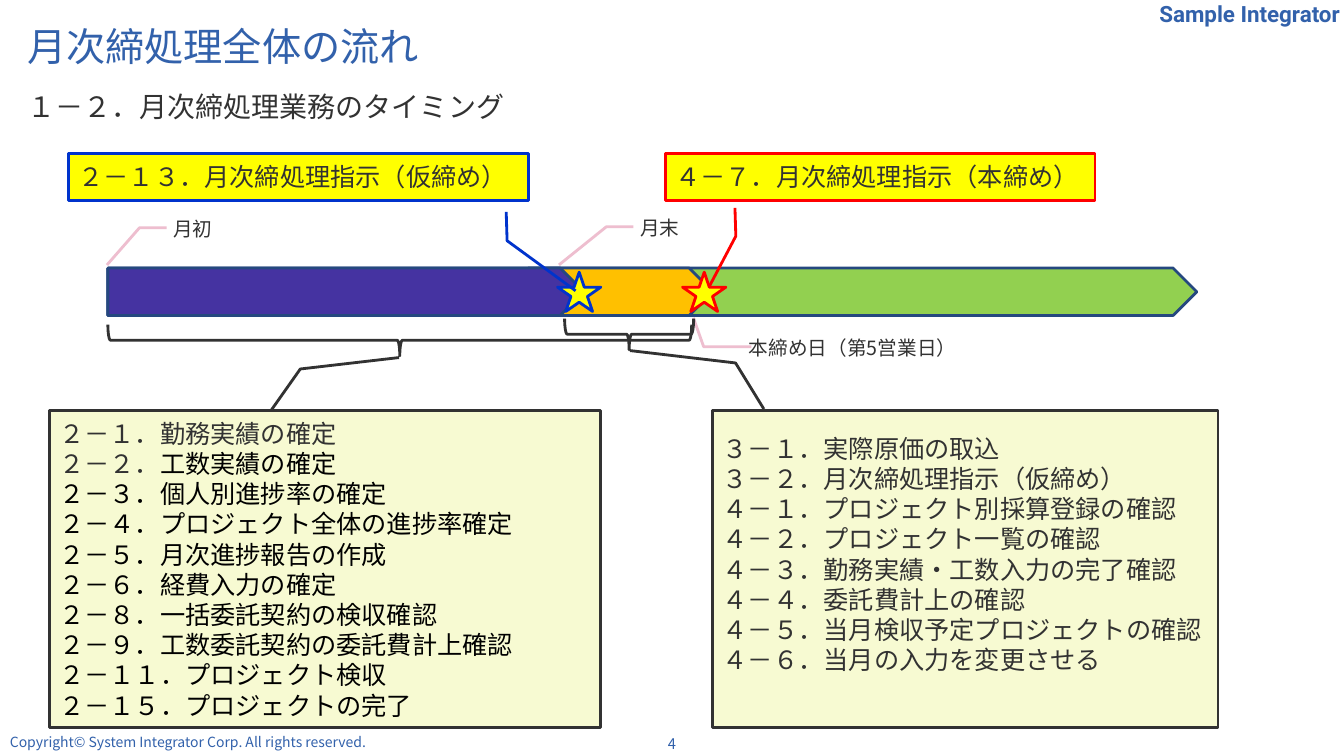
import pptx
import pptx.util
import pptx.dml.color
import pptx.enum.shapes
import pptx.enum.text
import pptx.oxml
import pptx.oxml.ns

Inches = pptx.util.Inches
Pt = pptx.util.Pt
SHAPE = pptx.enum.shapes.MSO_SHAPE
ANCHOR = pptx.enum.text.MSO_ANCHOR
ALIGN = pptx.enum.text.PP_ALIGN
NOTO = "Noto Sans CJK JP"

COLORS = {
    "brand": "3261AB", "text": "323232", "black": "000000",
    "purple": "4533A1", "orange": "FFC000", "green": "92D050",
    "bar_line": "25487F", "pink": "EEBECF", "cream": "F7FAD2",
    "yellow": "FFFF00", "red": "FF0000", "blue": "0033CC",
}

TASKS_BEFORE_CLOSE = [
    "２－１．勤務実績の確定",
    [("２－２．", "text"), ("工数実績の確定", "black")],
] + [[(task, "black")] for task in (
    "２－３．個人別進捗率の確定",
    "２－４．プロジェクト全体の進捗率確定",
    "２－５．月次進捗報告の作成",
    "２－６．経費入力の確定",
    "２－８．一括委託契約の検収確認",
    "２－９．工数委託契約の委託費計上確認",
    "２－１１．プロジェクト検収",
    "２－１５．プロジェクトの完了",
)]

TASKS_DURING_CLOSE = [
    "３－１．実際原価の取込",
    "３－２．月次締処理指示（仮締め）",
    "４－１．プロジェクト別採算登録の確認",
    "４－２．プロジェクト一覧の確認",
    "４－３．勤務実績・工数入力の完了確認",
    "４－４．委託費計上の確認",
    "４－５．当月検収予定プロジェクトの確認",
    "４－６．当月の入力を変更させる",
]


def rgb(name):
    return pptx.dml.color.RGBColor.from_string(COLORS[name])


def write(frame, paragraphs, size=18, color="text", font=NOTO, bold=False,
          align=ALIGN.LEFT, anchor=ANCHOR.MIDDLE, wrap=True,
          insets=(0.1, 0.05, 0.1, 0.05)):
    frame.auto_size = pptx.enum.text.MSO_AUTO_SIZE.NONE
    frame.word_wrap = wrap
    frame.vertical_anchor = anchor
    (frame.margin_left, frame.margin_top,
     frame.margin_right, frame.margin_bottom) = map(Inches, insets)
    for index, content in enumerate(paragraphs):
        paragraph = frame.add_paragraph() if index else frame.paragraphs[0]
        paragraph.alignment = align
        paragraph.space_before = Pt(0)
        pieces = [(content, color)] if isinstance(content, str) else content
        for words, shade in pieces:
            run = paragraph.add_run()
            run.text = words
            run.font.size = Pt(size)
            run.font.bold = bold
            run.font.color.rgb = rgb(shade)
            run.font.name = font
            east_asian = pptx.oxml.parse_xml(
                '<a:ea %s typeface="%s"/>' % (pptx.oxml.ns.nsdecls("a"), font))
            run.font._element.append(east_asian)


def add_outlined(slide, kind, box, line, fill=None, adjustments=()):
    shape = slide.shapes.add_shape(kind, *map(Inches, box))
    shape.shadow.inherit = False
    if fill:
        shape.fill.solid()
        shape.fill.fore_color.rgb = rgb(fill)
    else:
        shape.fill.background()
    shape.line.color.rgb = rgb(line)
    shape.line.width = Pt(2)
    for index, value in enumerate(adjustments):
        shape.adjustments[index] = value
    return shape


def add_heading(slide, box):
    left, top, width, height = box
    title = slide.shapes.title
    title.left, title.top, title.width, title.height = map(Inches, (left, top, width, 0.35))
    write(title.text_frame, ["月次締処理全体の流れ"], size=28, color="brand")

    subtitle = slide.placeholders[1]
    subtitle.left, subtitle.top, subtitle.width, subtitle.height = map(
        Inches, (left, top + 0.56, width, height - 0.56))
    properties = subtitle.text_frame.paragraphs[0]._p.get_or_add_pPr()
    properties.set("marL", "0")
    properties.set("indent", "0")
    properties.append(pptx.oxml.parse_xml("<a:buNone %s/>" % pptx.oxml.ns.nsdecls("a")))
    write(subtitle.text_frame, ["１－２．月次締処理業務のタイミング"], size=20, anchor=ANCHOR.TOP)


def add_page_furniture(slide, box):
    left, top, width, height = box
    bottom = top + height
    copyright_line = slide.shapes.add_textbox(*map(Inches, (left, bottom - 0.27, 6.14, 0.27)))
    write(copyright_line.text_frame, ["Copyright© System Integrator Corp. All rights reserved."],
          size=10, color="brand", anchor=ANCHOR.TOP)
    page_number = slide.shapes.add_textbox(
        *map(Inches, (left + width / 2 - 0.19, bottom - 0.26, 0.38, 0.28)))
    write(page_number.text_frame, ["4"], size=10.5, color="brand", align=ALIGN.CENTER)
    company = slide.shapes.add_textbox(*map(Inches, (left + width - 2.21, top, 2.21, 0.31)))
    write(company.text_frame, ["Sample Integrator"], size=16, color="brand", font="Roboto",
          bold=True, align=ALIGN.RIGHT, anchor=ANCHOR.TOP, insets=(0, 0, 0.04, 0))


def add_timeline(slide, box):
    left, top, width, height = box
    for offset, length, fill in ((0, width, "green"), (4.17, 1.83, "orange"), (0, 4.72, "purple")):
        add_outlined(slide, SHAPE.PENTAGON, (left + offset, top, length, height), "bar_line", fill)

    date_labels = (
        ("月初", 0.55, -0.55, 0.61, (0.485, 0.052, 0.485, -0.388, 1.675, -0.918)),
        ("月末", 5.18, -0.56, 0.61, (0.485, 0.052, 0.485, -0.388, 1.704, -1.158)),
        ("本締め日（第5営業日）", 6.26, 0.63, 2.37, (0.485, 0.052, 0.485, -0.148, -0.443, -0.191)),
    )
    for words, across, down, length, leader in date_labels:
        label = add_outlined(slide, SHAPE.LINE_CALLOUT_2_NO_BORDER,
                             (left + across, top + down, length, 0.31), "pink",
                             adjustments=leader)
        write(label.text_frame, [words], size=14)

    depth = 0.31
    for start, down, span in ((0, 0.56, 5.79), (4.53, 0.5, 1.28)):
        brace_left = left + start + (span - depth) / 2
        brace_top = top + down - (span - depth) / 2
        brace = add_outlined(slide, SHAPE.LEFT_BRACE, (brace_left, brace_top, depth, span), "text")
        brace.rotation = 270


def add_callout(slide, box, paragraphs, line, fill, leader, bottom_inset=0.05):
    callout = add_outlined(slide, SHAPE.LINE_CALLOUT_2, box, line, fill, leader)
    write(callout.text_frame, paragraphs, insets=(0.1, 0.05, 0.1, bottom_inset))


def add_star(slide, box, line):
    add_outlined(slide, SHAPE.STAR_5_POINT, box, line, "yellow")


def add_closing_slide(presentation):
    slide = presentation.slides.add_slide(presentation.slide_layouts[1])
    add_page_furniture(slide, (0, 0, 13.33, 7.5))
    add_heading(slide, (0.17, 0.28, 12.99, 1.35))
    add_timeline(slide, (1.07, 2.66, 10.8, 0.47))
    add_callout(slide, (0.49, 4.07, 5.47, 3.15), TASKS_BEFORE_CLOSE, "text", "cream",
                (-0.002, 0.403, -0.13, 0.455, -0.166, 0.634))
    add_callout(slide, (6.6, 1.52, 4.26, 0.47), ["４－７．月次締処理指示（本締め）"], "red", "yellow",
                (1.154, 0.162, 1.751, 0.164, 2.835, 0.101))
    add_star(slide, (5.53, 2.7, 0.43, 0.39), "blue")
    add_callout(slide, (0.68, 1.52, 4.56, 0.47), ["２－１３．月次締処理指示（仮締め）"], "blue", "yellow",
                (1.238, 0.952, 1.848, 0.954, 2.903, 1.103))
    add_callout(slide, (7.07, 4.07, 5.01, 3.15), TASKS_DURING_CLOSE, "text", "cream",
                (-0.004, 0.101, -0.149, 0.045, -0.188, -0.164), bottom_inset=0.35)
    add_star(slide, (6.77, 2.7, 0.43, 0.39), "red")


def main():
    presentation = pptx.Presentation()
    presentation.slide_width = Inches(13.33)
    presentation.slide_height = Inches(7.5)
    add_closing_slide(presentation)
    presentation.save("out.pptx")


if __name__ == "__main__":
    main()
